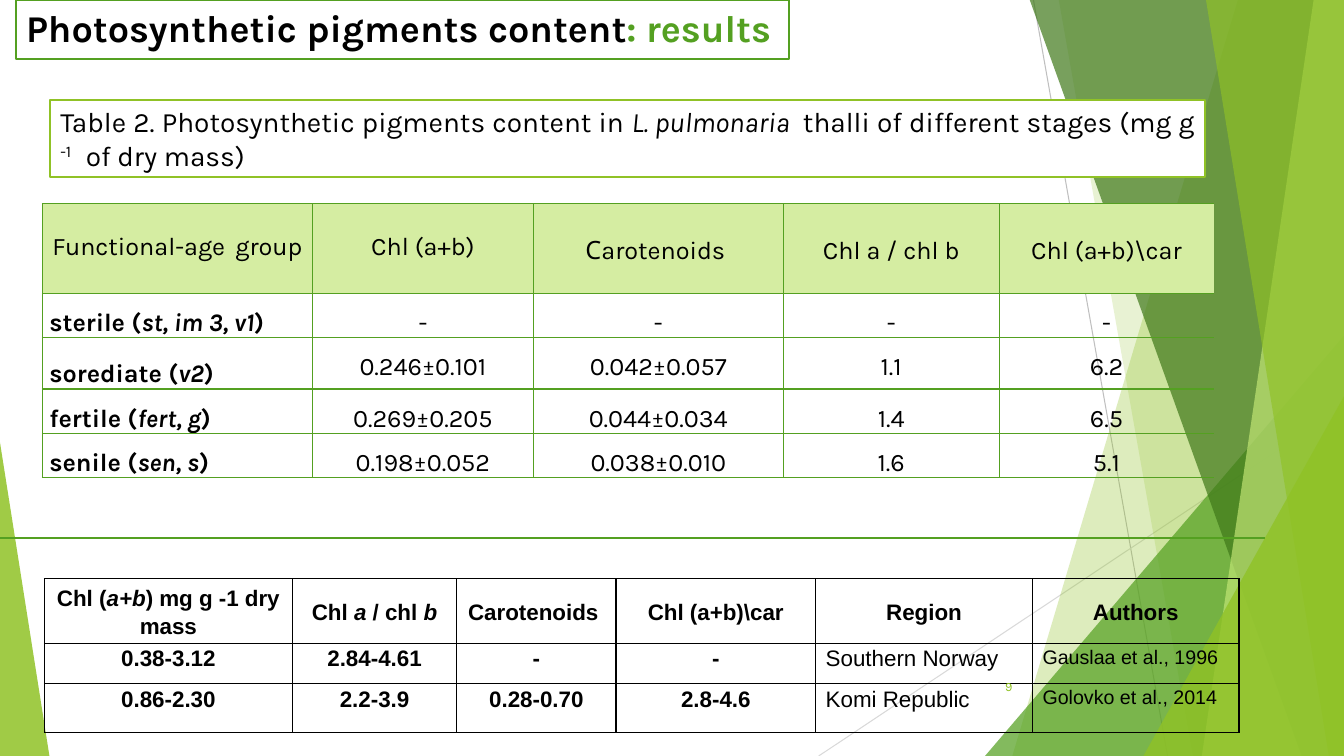
from lxml.etree import SubElement
from pptx import Presentation
from pptx.dml.color import RGBColor
from pptx.enum.shapes import MSO_CONNECTOR, MSO_SHAPE
from pptx.enum.text import MSO_ANCHOR as Anchor, PP_ALIGN as Align
from pptx.oxml.ns import qn
from pptx.util import Inches, Pt

BLACK = RGBColor(0x00, 0x00, 0x00)
WHITE = RGBColor(0xFF, 0xFF, 0xFF)
LIME = RGBColor(0x90, 0xC2, 0x26)
GREEN = RGBColor(0x54, 0xA0, 0x21)
FOREST = RGBColor(0x3F, 0x78, 0x19)
PALE_LIME = RGBColor(0xC0, 0xE4, 0x74)
HEADER_GREEN = RGBColor(0xD5, 0xED, 0xA2)
GREY = RGBColor(0xBF, 0xBF, 0xBF)
LIGHT_GREY = RGBColor(0xD9, 0xD9, 0xD9)

WIDTH, HEIGHT, TOP = 13.33, 7.5, -0.01

# Text is a list of (words, format) runs, or a string where *stars* mark italics.
TITLE = [("Photosynthetic pigments content", {}), (": results", {"color": GREEN})]
CAPTION = [
    ("Table 2. Photosynthetic pigments content in ", {}),
    ("L. pulmonaria  ", {"italic": True}),
    ("thalli of different stages (mg g ", {}),
    ("-1  ", {"raised": True}),
    (" of dry mass)", {}),
]
PIGMENTS = [
    ["Functional-age group ", "Chl (a+b)", "Сarotenoids ", "Chl a / chl b", "Chl (a+b)\\car"],
    ["sterile (*st, im 3, v1*)", "-", "-", "-", "-"],
    ["sorediate (*v2*)", "0.246±0.101", "0.042±0.057", "1.1", "6.2"],
    ["fertile (*fert, g*)", "0.269±0.205", "0.044±0.034", "1.4", "6.5"],
    ["senile (*sen, s*) ", "0.198±0.052", "0.038±0.010", "1.6", "5.1"],
]
PIGMENT_COLS = [2.68, 2.19, 2.48, 2.14, 2.13]
PIGMENT_ROWS = [0.89, 0.43, 0.51, 0.44, 0.44]
REGIONS = [
    ["Chl (*a+b*) mg g -1 dry mass", "Chl *a* / chl *b*", "Сarotenoids ",
     "Chl (a+b)\\car", "Region", "Authors"],
    ["0.38-3.12", "2.84-4.61", "-", "-", "Southern Norway", "Gauslaa et al., 1996"],
    ["0.86-2.30", "2.2-3.9", "0.28-0.70", "2.8-4.6", "Komi Republic", "Golovko et al., 2014"],
]
REGION_COLS = [2.46, 1.63, 1.58, 1.98, 2.15, 2.05]
REGION_ROWS = [0.64, 0.4, 0.49]

# Each band runs to the right edge: top-left x, bottom-left x, colour, opacity %.
# Each triangle: left, top, width, apex (0 left, 1 right), colour, opacity %.
BACKDROP = [
    ("band", (12.28, 10.04), LIME, 30),
    ("band", (10.5, 11.83), LIME, 20),
    ("triangle", (9.77, 3.33, 3.56, 1), GREEN, 72),
    ("band", (10.21, 12.91), FOREST, 70),
    ("band", (13.03, 11.92), PALE_LIME, 70),
    ("band", (11.96, 13.18), LIME, 65),
    ("triangle", (11.34, 3.93, 1.99, 1), LIME, 80),
    ("triangle", (0, 4.39, 0.49, 0), LIME, 85),
]


def write(frame, text, *, font="Karla", size=18, color=BLACK, bold=False,
          align=Align.LEFT, spacing=None):
    """Fill the first paragraph of a frame with formatted runs."""
    if isinstance(text, str):
        text = [(words, {"italic": i % 2 == 1}) for i, words in enumerate(text.split("*"))]
    frame.word_wrap = True
    para = frame.paragraphs[0]
    para.alignment = align
    if spacing:
        para.line_spacing = spacing
    for words, look in text:
        if not words:
            continue
        span = para.add_run()
        span.text = words
        span.font.name, span.font.size = font, Pt(size)
        span.font.bold, span.font.italic = bold, look.get("italic", False)
        span.font.color.rgb = look.get("color", color)
        if look.get("raised"):
            span.font._element.set("baseline", "30000")


def add_line(page, start, end, color, width):
    line = page.shapes.add_connector(
        MSO_CONNECTOR.STRAIGHT, *(Inches(v) for v in (*start, *end)))
    line.line.color.rgb = color
    line.line.width = Pt(width)
    SubElement(line._element.spPr, qn("a:effectLst"))


def add_backdrop(page, kind, place, color, opacity):
    if kind == "band":
        top_x, bottom_x = place
        corners = [(WIDTH, TOP), (WIDTH, HEIGHT), (bottom_x, HEIGHT)]
        builder = page.shapes.build_freeform(Inches(top_x), Inches(TOP))
        builder.add_line_segments([(Inches(x), Inches(y)) for x, y in corners])
        shape = builder.convert_to_shape()
    else:
        left, top, width, apex = place
        shape = page.shapes.add_shape(
            MSO_SHAPE.ISOSCELES_TRIANGLE,
            *(Inches(v) for v in (left, top, width, HEIGHT - top)))
        shape.adjustments[0] = apex
    shape.shadow.inherit = False
    shape.line.fill.background()
    shape.fill.solid()
    shape.fill.fore_color.rgb = color
    tint = shape._element.spPr.find(qn("a:solidFill"))[0]
    SubElement(tint, qn("a:alpha"), val=str(opacity * 1000))


def add_box(page, place, text, outline, **look):
    box = page.shapes.add_shape(MSO_SHAPE.RECTANGLE, *(Inches(v) for v in place))
    box.shadow.inherit = False
    box.fill.solid()
    box.fill.fore_color.rgb = WHITE
    box.line.color.rgb = outline
    box.line.width = Pt(1.5)
    box.text_frame.vertical_anchor = Anchor.TOP
    write(box.text_frame, text, **look)


def set_borders(cell, color, sides):
    properties = cell._tc.get_or_add_tcPr()
    for side in "LRTB":
        edge = SubElement(properties, qn(f"a:ln{side}"), w=str(Pt(1)))
        if side in sides:
            paint = SubElement(edge, qn("a:solidFill"))
            SubElement(paint, qn("a:srgbClr"), val=str(color))
        else:
            SubElement(edge, qn("a:noFill"))


def add_grid(page, left, top, cols, rows, content, style, border, open_right=False):
    """Add a table; style(row, col) gives margin, anchor, fill and text format."""
    table = page.shapes.add_table(
        len(rows), len(cols), Inches(left), Inches(top),
        Inches(sum(cols)), Inches(sum(rows))).table
    table.first_row = table.horz_banding = False
    for column, width in zip(table.columns, cols):
        column.width = Inches(width)
    for r, (height, texts) in enumerate(zip(rows, content)):
        table.rows[r].height = Inches(height)
        for c, text in enumerate(texts):
            cell = table.cell(r, c)
            margin, anchor, fill, look = style(r, c)
            cell.margin_left = cell.margin_right = Inches(margin)
            cell.margin_top = cell.margin_bottom = 0
            cell.vertical_anchor = anchor
            at_open_edge = open_right and c == len(cols) - 1
            set_borders(cell, border, "LTB" if at_open_edge else "LRTB")
            if fill:
                cell.fill.solid()
                cell.fill.fore_color.rgb = fill
            else:
                cell.fill.background()
            write(cell.text_frame, text, **look)


def pigment_style(row, col):
    align = Align.CENTER if col else Align.JUSTIFY
    if row == 0:
        return 0.1, Anchor.MIDDLE, HEADER_GREEN, dict(align=align, spacing=0.8 if col < 2 else 1.15)
    if col == 0:
        return 0.07, Anchor.BOTTOM, None, dict(align=align, spacing=1.15, bold=True)
    return 0.1, Anchor.TOP, None, dict(align=align, spacing=1.5)


def region_style(row, col):
    plain = row > 0 and col > 3
    look = dict(font="Arial", size=14 if plain and col == 5 else 16, bold=not plain,
                align=Align.LEFT if plain else Align.CENTER, spacing=1.15)
    return 0.1, Anchor.TOP if row else Anchor.MIDDLE, None, look


def main():
    deck = Presentation()
    deck.slide_width, deck.slide_height = Inches(WIDTH), Inches(HEIGHT)
    page = deck.slides.add_slide(deck.slide_layouts[6])

    add_line(page, (10.25, 0), (11.58, HEIGHT), GREY, 0.75)
    add_line(page, (WIDTH, 4.03), (8.12, HEIGHT), LIGHT_GREY, 0.75)
    for part in BACKDROP:
        add_backdrop(page, *part)

    add_grid(page, 0.44, 5.74, REGION_COLS, REGION_ROWS, REGIONS, region_style, BLACK)
    add_grid(page, 0.42, 2.02, PIGMENT_COLS, PIGMENT_ROWS, PIGMENTS, pigment_style,
             GREEN, open_right=True)
    add_line(page, (0, 5.34), (12.55, 5.34), GREEN, 1.5)

    number = page.shapes.add_textbox(*(Inches(v) for v in (9.39, 6.61, 0.75, 0.4)))
    number.text_frame.vertical_anchor = Anchor.MIDDLE
    write(number.text_frame, "9", size=9, color=LIME, align=Align.RIGHT)

    add_box(page, (0.16, 0, 7.67, 0.59), TITLE, GREEN, size=27, bold=True)
    add_box(page, (0.5, 0.99, 11.45, 0.77), CAPTION, LIME, size=20, align=Align.JUSTIFY)
    deck.save("out.pptx")


if __name__ == "__main__":
    main()
